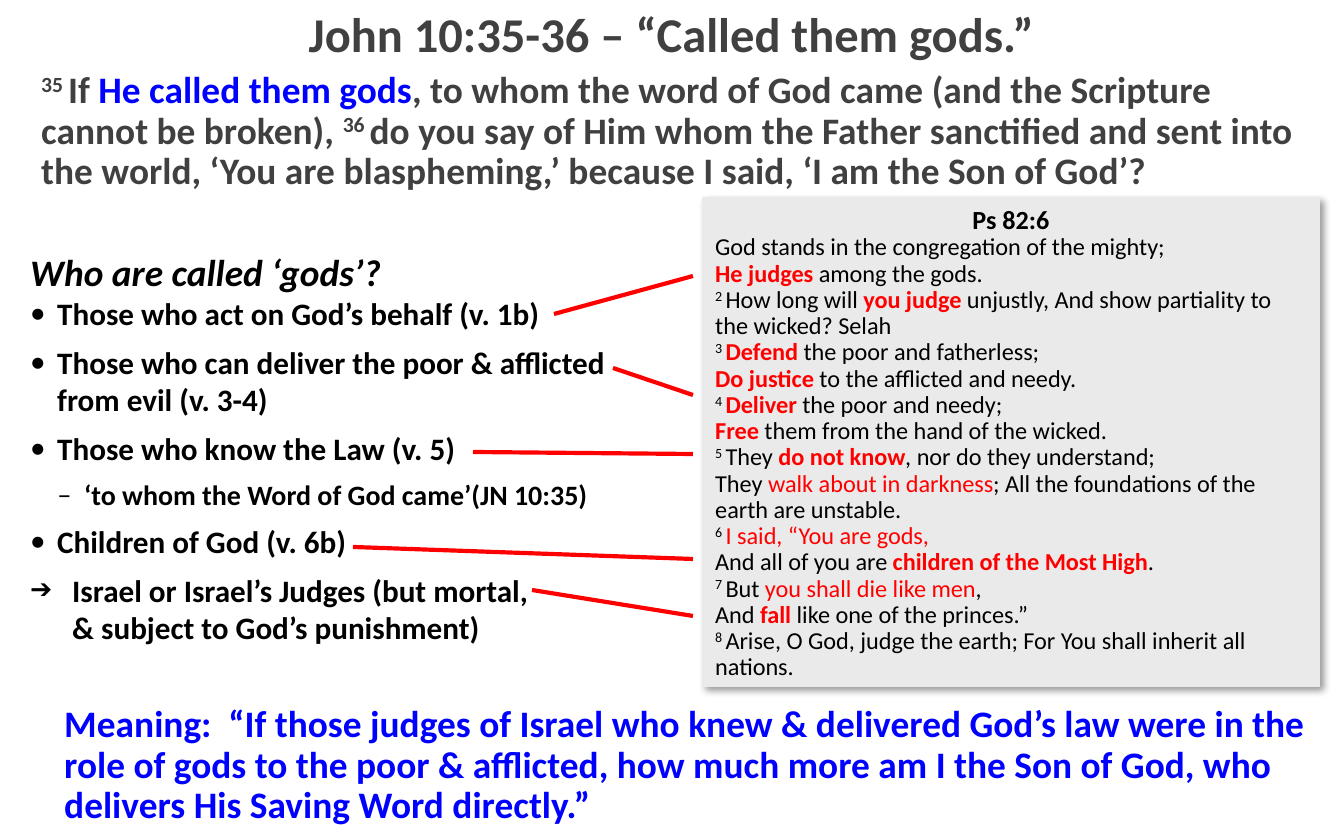
"""Build a slide that sets John 10:35-36 beside Psalm 82."""
import lxml.etree
import pptx
import pptx.dml.color
import pptx.enum.shapes
import pptx.enum.text
import pptx.oxml
import pptx.oxml.ns
import pptx.util

PX = 914400 / 134.4
THEME = {
    "font": "Calibri",
    "gray": "404040", "black": "000000", "red": "FF0000", "blue": "0000FF", "panel": "EAEAEA",
    "title": 26, "lead": 20, "point": 16.7, "sub": 15, "psalm_head": 14, "psalm": 13, "line": 2.25,
}
STYLES = {
    "plain": {},
    "sup": {"sup": True},
    "red": {"color": "red"},
    "key": {"color": "red", "bold": True},
    "blue": {"color": "blue"},
}

TITLE = "John 10:35-36 – “Called them gods.”"
PASSAGE = [
    ("35 ", "sup"), ("If ", "plain"), ("He called them gods", "blue"),
    (", to whom the word of God came (and the Scripture cannot be broken), ", "plain"),
    ("36 ", "sup"),
    ("do you say of Him whom the Father sanctified and sent into the world, "
     "‘You are blaspheming,’ because I said, ‘I am the Son of God’?", "plain"),
]
QUESTION = "Who are called ‘gods’?"
ANSWERS = [
    ("point", "Those who act on God’s behalf (v. 1b)"),
    ("point", "Those who can deliver the poor & afflicted from evil (v. 3-4)"),
    ("point", "Those who know the Law (v. 5)"),
    ("sub", "‘to whom the Word of God came’(JN 10:35)"),
    ("point", "Children of God (v. 6b)"),
    ("result", "Israel or Israel’s Judges (but mortal, \n& subject to God’s punishment)"),
]
LEVELS = {
    "point": {"bullet": "•", "left": 27, "hang": 27, "after": 6, "size": "point", "level": 0},
    "sub": {"bullet": "‒", "left": 54, "hang": 27, "after": 6, "size": "sub", "level": 1},
    "result": {"bullet": "➔", "left": 42, "hang": 42, "after": 0, "size": "point", "level": 0, "scale": 85},
}
PSALM_HEAD = "Ps 82:6"
PSALM = [
    [("God stands in the congregation of the mighty;\n", "plain"), ("He judges ", "key"),
     ("among the gods.", "plain")],
    [("2 ", "sup"), ("How long will ", "plain"), ("you judge ", "key"),
     ("unjustly, And show partiality to the wicked? Selah", "plain")],
    [("3 ", "sup"), ("Defend", "key"), (" the poor and fatherless;\n", "plain"),
     ("Do justice ", "key"), ("to the afflicted and needy.", "plain")],
    [("4 ", "sup"), ("Deliver", "key"), (" the poor and needy;\n", "plain"),
     ("Free ", "key"), ("them from the hand of the wicked.", "plain")],
    [("5 ", "sup"), ("They ", "plain"), ("do not know", "key"),
     (", nor do they understand;\nThey ", "plain"), ("walk about in darkness", "red"),
     ("; All the foundations of the earth are unstable.", "plain")],
    [("6 ", "sup"), ("I said, “You are gods,\n", "red"), ("And all of you are ", "plain"),
     ("children of the Most High", "key"), (".\n", "plain"),
     ("7 ", "sup"), ("But ", "plain"), ("you shall die like men", "red"), (",\nAnd ", "plain"),
     ("fall", "key"), (" like one of the princes.”", "plain")],
    [("8 ", "sup"),
     ("Arise, O God, judge the earth; For You shall inherit all nations.", "plain")],
]
MEANING = (
    "Meaning:  “If those judges of Israel who knew & delivered God’s law were in the role of gods "
    "to the poor & afflicted, how much more am I the Son of God, who delivers His Saving Word directly.”"
)
BOXES = {
    "title": (112, 4, 1120, 59),
    "passage": (28, 65, 1292, 144),
    "answers": (17, 243, 604, 413),
    "psalm": (702, 197, 618, 490),
    "meaning": (51, 699, 1269, 136),
}
LINK_END_X = 693
LINKS = [(554, 314, 276), (613, 368, 395), (473, 452, 454), (353, 547, 559), (532, 590, 616)]


def px(n):
    return pptx.util.Emu(round(n * PX))


def rgb(name):
    return pptx.dml.color.RGBColor.from_string(THEME[name])


def write(p, runs, size, color="black", bold=False, italic=False):
    for text, style in runs:
        look = STYLES[style]
        for i, part in enumerate(text.split("\n")):
            if i:
                p.add_line_break()
            if not part:
                continue
            r = p.add_run()
            r.text = part
            r.font.name = THEME["font"]
            r.font.size = pptx.util.Pt(THEME[size])
            r.font.bold = look.get("bold", bold)
            r.font.italic = italic
            r.font.color.rgb = rgb(look.get("color", color))
            if look.get("sup"):
                r.font._element.set("baseline", "30000")


def add_child(parent, tag, **attrs):
    el = lxml.etree.SubElement(parent, pptx.oxml.ns.qn(tag))
    for name, value in attrs.items():
        el.set(name, str(value))
    return el


def add_bullet(p, level):
    pPr = p._p.get_or_add_pPr()
    pPr.set("marL", str(px(level["left"])))
    pPr.set("indent", str(-px(level["hang"])))
    if "scale" in level:
        add_child(pPr, "a:buSzPct", val=level["scale"] * 1000)
    add_child(pPr, "a:buFont", typeface=THEME["font"])
    add_child(pPr, "a:buChar", char=level["bullet"])


def add_box(s, name):
    tf = s.shapes.add_textbox(*map(px, BOXES[name])).text_frame
    tf.word_wrap = True
    return tf


def add_title(s):
    sp = s.shapes.title
    sp.left, sp.top, sp.width, sp.height = map(px, BOXES["title"])
    tf = sp.text_frame
    tf.vertical_anchor = pptx.enum.text.MSO_ANCHOR.MIDDLE
    tf.paragraphs[0].alignment = pptx.enum.text.PP_ALIGN.CENTER
    write(tf.paragraphs[0], [(TITLE, "plain")], "title", "gray", True)


def add_statement(s, name, runs, color):
    p = add_box(s, name).paragraphs[0]
    p.line_spacing = 0.9
    write(p, runs, "lead", color, True)


def add_answers(s):
    tf = add_box(s, "answers")
    write(tf.paragraphs[0], [(QUESTION, "plain")], "lead", bold=True, italic=True)
    for kind, text in ANSWERS:
        level = LEVELS[kind]
        p = tf.add_paragraph()
        p.level = level["level"]
        p.space_after = pptx.util.Pt(level["after"])
        add_bullet(p, level)
        write(p, [(text, "plain")], level["size"], bold=True)


def add_psalm(s):
    sp = s.shapes.add_shape(pptx.enum.shapes.MSO_SHAPE.RECTANGLE, *map(px, BOXES["psalm"]))
    sp.fill.solid()
    sp.fill.fore_color.rgb = rgb("panel")
    sp.line.fill.background()
    effects = add_child(sp._element.spPr, "a:effectLst")
    shadow = add_child(effects, "a:outerShdw", blurRad=pptx.util.Pt(4), dist=pptx.util.Pt(3),
                       dir=45 * 60000, algn="tl", rotWithShape=0)
    add_child(add_child(shadow, "a:srgbClr", val=THEME["black"]), "a:alpha", val=40000)
    tf = sp.text_frame
    tf.word_wrap = True
    tf.vertical_anchor = pptx.enum.text.MSO_ANCHOR.TOP
    tf.paragraphs[0].alignment = pptx.enum.text.PP_ALIGN.CENTER
    write(tf.paragraphs[0], [(PSALM_HEAD, "plain")], "psalm_head", bold=True)
    for verse in PSALM:
        p = tf.add_paragraph()
        p.alignment = pptx.enum.text.PP_ALIGN.LEFT
        p.line_spacing = 0.9
        write(p, verse, "psalm")


def add_links(s):
    for x, y, end_y in LINKS:
        link = s.shapes.add_connector(pptx.enum.shapes.MSO_CONNECTOR.STRAIGHT,
                                      px(x), px(y), px(LINK_END_X), px(end_y))
        link.line.color.rgb = rgb("red")
        link.line.width = pptx.util.Pt(THEME["line"])
        add_child(link._element.spPr, "a:effectLst")


def main():
    prs = pptx.Presentation()
    prs.slide_width, prs.slide_height = px(1344), px(840)
    s = prs.slides.add_slide(prs.slide_layouts[5])
    add_title(s)
    add_answers(s)
    add_statement(s, "meaning", [(MEANING, "plain")], "blue")
    add_psalm(s)
    add_statement(s, "passage", PASSAGE, "gray")
    add_links(s)
    prs.save("out.pptx")


if __name__ == "__main__":
    main()
